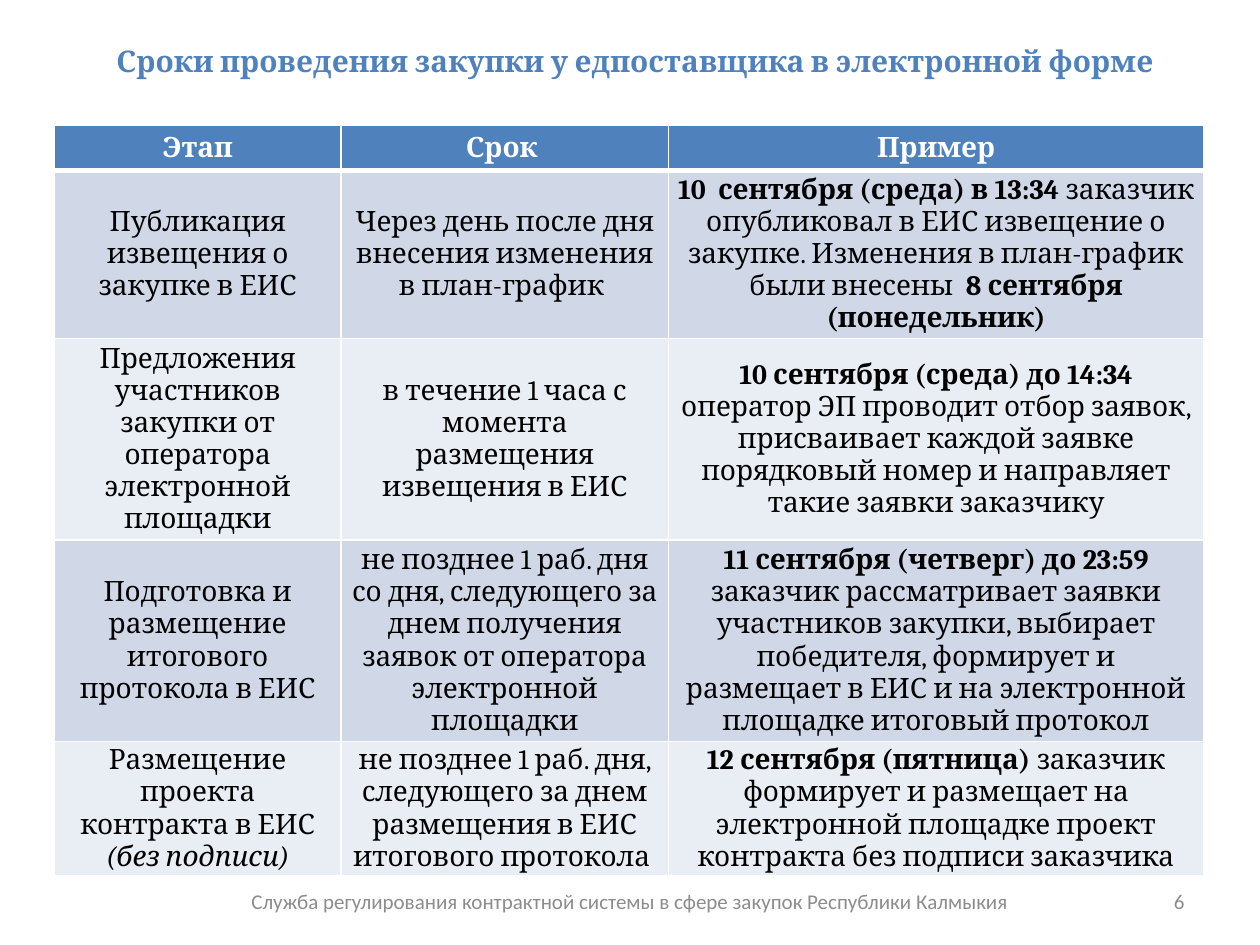
from pptx import Presentation
from pptx.dml.color import RGBColor
from pptx.enum.text import MSO_ANCHOR as Anchor, MSO_AUTO_SIZE as AutoSize, PP_ALIGN as Align
from pptx.oxml import parse_xml
from pptx.oxml.ns import nsdecls
from pptx.util import Pt

# Content: each cell is a list of (text, style), style "b" bold, "i" italic
TITLE = "Сроки проведения закупки у едпоставщика в электронной форме"
FOOTER = "Служба регулирования контрактной системы в сфере закупок Республики Калмыкия"
PAGE = "6"
ROWS = [
    [[("Этап", "b")], [("Срок ", "b")], [("Пример", "b")]],
    [[("Публикация извещения о закупке в ЕИС", "")],
     [("Через день после дня внесения изменения в план-график ", "")],
     [("10  сентября (среда) в 13:34", "b"),
      (" заказчик опубликовал в ЕИС извещение о закупке. "
       "Изменения в план-график были внесены ", ""),
      (" 8 сентября (понедельник)", "b")]],
    [[("Предложения участников закупки от оператора электронной площадки", "")],
     [("в течение 1 часа с момента размещения извещения в ЕИС", "")],
     [("10 сентября (среда) до 14:34", "b"),
      (" оператор ЭП проводит отбор заявок, присваивает каждой заявке "
       "порядковый номер и направляет такие заявки заказчику", "")]],
    [[("Подготовка и размещение итогового протокола в ЕИС", "")],
     [("не позднее 1 раб. дня со дня, следующего за днем получения заявок "
       "от оператора электронной площадки", "")],
     [("11 сентября (четверг) до 23:59 ", "b"),
      ("заказчик рассматривает заявки участников закупки, выбирает победителя, "
       "формирует и размещает в ЕИС и на электронной площадке итоговый протокол", "")]],
    [[("Размещение проекта контракта в ЕИС ", ""), ("(без подписи)", "i")],
     [("не позднее 1 раб. дня, следующего за днем размещения в ЕИС "
       "итогового протокола ", "")],
     [("12 сентября (пятница) ", "b"),
      ("заказчик формирует и размещает на электронной площадке "
       "проект контракта без подписи заказчика", "")]],
]
COL_WIDTHS = [164, 187, 306]
ROW_HEIGHTS = [26, 96, 115, 115, 76.5]
BLUE, WHITE, BLACK, GRAY = "4F81BD", "FFFFFF", "000000", "8C8C8C"
BANDS = ["D0D8E8", "E9EDF4"]


def rgb(value):
    return RGBColor.from_string(value)


def add_run(p, text, font, size, color, style=""):
    r = p.add_run()
    r.text = text
    f = r.font
    f.name, f.size, f.color.rgb = font, Pt(size), rgb(color)
    f.bold, f.italic = "b" in style, "i" in style


def add_borders(cell, widths):
    for side, width in zip("LRTB", widths):
        cell._tc.get_or_add_tcPr().append(parse_xml(
            f'<a:ln{side} {nsdecls("a")} w="{Pt(width)}"><a:solidFill>'
            f'<a:srgbClr val="{WHITE}"/></a:solidFill></a:ln{side}>'))


def add_footer(s, text, left, width, align):
    tf = s.shapes.add_textbox(Pt(left), Pt(500.5), Pt(width), Pt(28.75)).text_frame
    tf.word_wrap, tf.vertical_anchor = True, Anchor.MIDDLE
    p = tf.paragraphs[0]
    p.alignment = align
    add_run(p, text, "Calibri", 12, GRAY)


prs = Presentation()
prs.slide_width, prs.slide_height = Pt(720), Pt(540)
s = prs.slides.add_slide(prs.slide_layouts[5])

# Title
sp = s.shapes.title
sp.left, sp.top, sp.width, sp.height = Pt(54), Pt(21), Pt(618), Pt(28)
tf = sp.text_frame
tf.auto_size, tf.vertical_anchor = AutoSize.NONE, Anchor.TOP
p = tf.paragraphs[0]
p.alignment = Align.CENTER
add_run(p, TITLE, "Cambria", 17, BLUE, "b")

# Footer and page number
add_footer(s, FOOTER, 0, 720, Align.CENTER)
add_footer(s, PAGE, 516, 168, Align.RIGHT)

# Schedule table
table = s.shapes.add_table(len(ROWS), len(COL_WIDTHS), Pt(31), Pt(71.5),
                           Pt(sum(COL_WIDTHS)), Pt(sum(ROW_HEIGHTS))).table
for col, width in zip(table.columns, COL_WIDTHS):
    col.width = Pt(width)
for row, height in zip(table.rows, ROW_HEIGHTS):
    row.height = Pt(height)

for i, row in enumerate(ROWS):
    header = i == 0
    for j, runs in enumerate(row):
        cell = table.cell(i, j)
        add_borders(cell, (1, 1, 3 if i == 1 else 1, 3 if header else 1))
        cell.fill.solid()
        cell.fill.fore_color.rgb = rgb(BLUE if header else BANDS[(i - 1) % 2])
        cell.vertical_anchor = Anchor.MIDDLE
        cell.margin_left = cell.margin_right = Pt(5)
        cell.margin_top = cell.margin_bottom = Pt(0)
        p = cell.text_frame.paragraphs[0]
        p.alignment = Align.CENTER
        for text, style in runs:
            add_run(p, text, "Cambria", 16, WHITE if header else BLACK, style)

prs.save("out.pptx")
